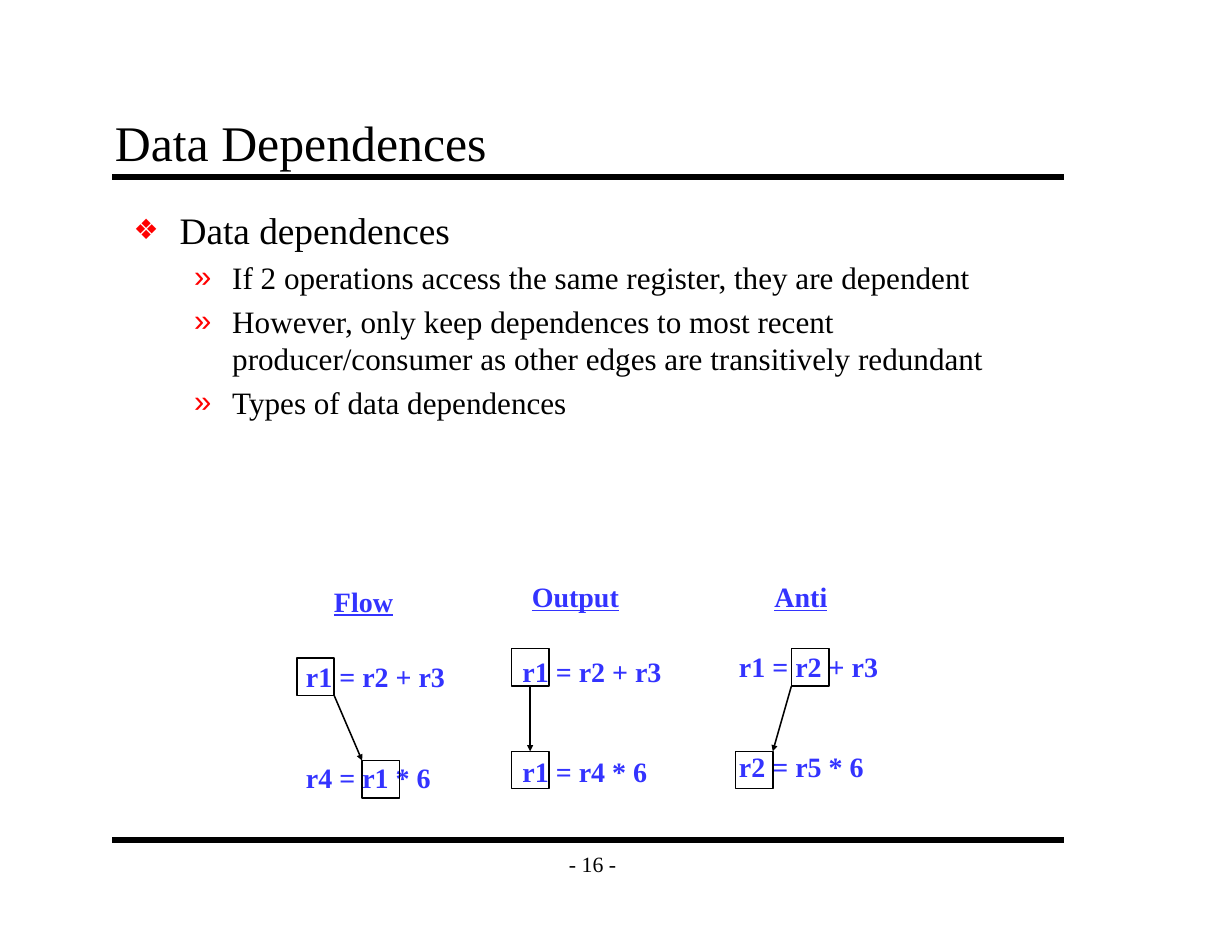
from pptx import Presentation
from pptx.dml.color import RGBColor
from pptx.enum.shapes import MSO_CONNECTOR, MSO_SHAPE
from pptx.enum.text import MSO_ANCHOR, MSO_AUTO_SIZE, PP_ALIGN
from pptx.oxml.ns import qn
from pptx.util import Inches, Pt
from lxml.etree import SubElement

CELLS_PER_INCH = 12
SQUARE = 4
FONT = "Times New Roman"
BLACK, BLUE, RED = "000000", "3333FF", "FF0000"

BULLETS = [
    (0, "Data dependences"),
    (1, "If 2 operations access the same register, they are dependent"),
    (1, "However, only keep dependences to most recent "
        "producer/consumer as other edges are transitively redundant"),
    (1, "Types of data dependences"),
]
LEVELS = [
    {"size": 24, "margin": 0.41, "hang": 0.41, "mark": "❖", "scale": 75},
    {"size": 20, "margin": 0.88, "hang": 0.34, "mark": "»", "scale": 100},
]
EXAMPLES = [
    {"heading": ("Flow", 34.6, 62, 9.2), "code_at": (31.6, 70.1),
     "code": ("r1 = r2 + r3", "r4 = r1 * 6"),
     "source": (31.8, 70.5), "target": (38.8, 81.5)},
    {"heading": ("Output", 55.8, 61.5, 12.2), "code_at": (54.8, 69.5),
     "code": ("r1 = r2 + r3", "r1 = r4 * 6"),
     "source": (54.8, 69.5), "target": (54.8, 80.5)},
    {"heading": ("Anti", 81.8, 61.5, 8.8), "code_at": (78, 69),
     "code": ("r1 = r2 + r3", "r2 = r5 * 6"),
     "source": (84.8, 69.5), "target": (78.8, 80.5)},
]


def grid(*cells):
    return [Inches(cell / CELLS_PER_INCH) for cell in cells]


def color(hex_value):
    return RGBColor.from_string(hex_value)


def add_run(paragraph, text, size, hex_value=BLACK, bold=False, underline=False):
    run = paragraph.add_run()
    run.text = text
    run.font.name = FONT
    run.font.size = Pt(size)
    run.font.bold = bold
    run.font.underline = underline
    run.font.color.rgb = color(hex_value)


def set_insets(frame):
    frame.margin_left = frame.margin_right = Inches(0.11)
    frame.margin_top = frame.margin_bottom = Inches(0.06)


def place(placeholder, *cells):
    (placeholder.left, placeholder.top,
     placeholder.width, placeholder.height) = grid(*cells)
    frame = placeholder.text_frame
    frame.auto_size = MSO_AUTO_SIZE.NONE
    set_insets(frame)
    return frame


def set_bullet(paragraph, level):
    properties = paragraph._p.get_or_add_pPr()
    properties.set("marL", str(Inches(level["margin"])))
    properties.set("indent", str(-Inches(level["hang"])))
    tint = SubElement(properties, qn("a:buClr"))
    SubElement(tint, qn("a:srgbClr"), val=RED)
    SubElement(properties, qn("a:buSzPct"), val=str(level["scale"] * 1000))
    SubElement(properties, qn("a:buChar"), char=level["mark"])


def add_title(slide):
    frame = place(slide.shapes.title, 11, 11.1, 102, 8)
    frame.vertical_anchor = MSO_ANCHOR.BOTTOM
    frame.paragraphs[0].alignment = PP_ALIGN.LEFT
    add_run(frame.paragraphs[0], "Data Dependences", 32)


def add_bullets(slide):
    frame = place(slide.placeholders[1], 13, 21.5, 101, 68.5)
    for index, (depth, text) in enumerate(BULLETS):
        paragraph = frame.add_paragraph() if index else frame.paragraphs[0]
        level = LEVELS[depth]
        paragraph.level = depth
        paragraph.space_before = Pt(level["size"] * 0.2)
        set_bullet(paragraph, level)
        add_run(paragraph, text, level["size"])


def add_label(slide, *cells):
    frame = slide.shapes.add_textbox(*grid(*cells)).text_frame
    frame.word_wrap = False
    frame.auto_size = MSO_AUTO_SIZE.SHAPE_TO_FIT_TEXT
    return frame


def add_line(slide, start, end, width):
    line = slide.shapes.add_connector(
        MSO_CONNECTOR.STRAIGHT, *grid(*start), *grid(*end))
    line.line.color.rgb = color(BLACK)
    line.line.width = Pt(width)
    SubElement(line._element.spPr, qn("a:effectLst"))
    return line


def add_register_box(slide, corner):
    box = slide.shapes.add_shape(
        MSO_SHAPE.RECTANGLE, *grid(*corner, SQUARE, SQUARE))
    box.shadow.inherit = False
    box.fill.background()
    box.line.color.rgb = color(BLACK)
    box.line.width = Pt(1)
    return box


def add_dependence(slide, source, target):
    source_box = add_register_box(slide, source)
    target_box = add_register_box(slide, target)
    shift = target[0] - source[0]
    inset = SQUARE / 2
    start_x = source[0] + inset + (inset if shift > 0 else -inset)
    end_x = target[0] + inset + (inset if shift < 0 else -inset)
    arrow = add_line(slide, (start_x, source[1] + SQUARE), (end_x, target[1]), 1)
    if shift == 0:
        arrow.begin_connect(source_box, 2)
        arrow.end_connect(target_box, 0)
    SubElement(arrow.line._get_or_add_ln(), qn("a:tailEnd"),
               type="triangle", w="sm", len="sm")


def add_example(slide, example):
    name, left, top, width = example["heading"]
    heading = add_label(slide, left, top, width, 4.8)
    add_run(heading.paragraphs[0], name, 18, BLUE, bold=True, underline=True)

    code = add_label(slide, *example["code_at"], 17.3, 15.6)
    first, second = example["code"]
    add_run(code.paragraphs[0], first, 18, BLUE, bold=True)
    later = code.add_paragraph()
    later.space_before = Pt(43)
    add_run(later, second, 18, BLUE, bold=True)

    add_dependence(slide, example["source"], example["target"])


def add_page_number(slide):
    frame = add_label(slide, 59, 90, 9, 5)
    frame.auto_size = MSO_AUTO_SIZE.NONE
    frame.vertical_anchor = MSO_ANCHOR.MIDDLE
    set_insets(frame)
    frame.paragraphs[0].alignment = PP_ALIGN.CENTER
    add_run(frame.paragraphs[0], "- 16 -", 14)


def main():
    deck = Presentation()
    deck.slide_width, deck.slide_height = Inches(11), Inches(8.5)
    slide = deck.slides.add_slide(deck.slide_layouts[1])
    for row in (19, 90):
        add_line(slide, (12, row), (114, row), 4)
    add_page_number(slide)
    add_title(slide)
    add_bullets(slide)
    for example in EXAMPLES:
        add_example(slide, example)
    deck.save("out.pptx")


if __name__ == "__main__":
    main()
